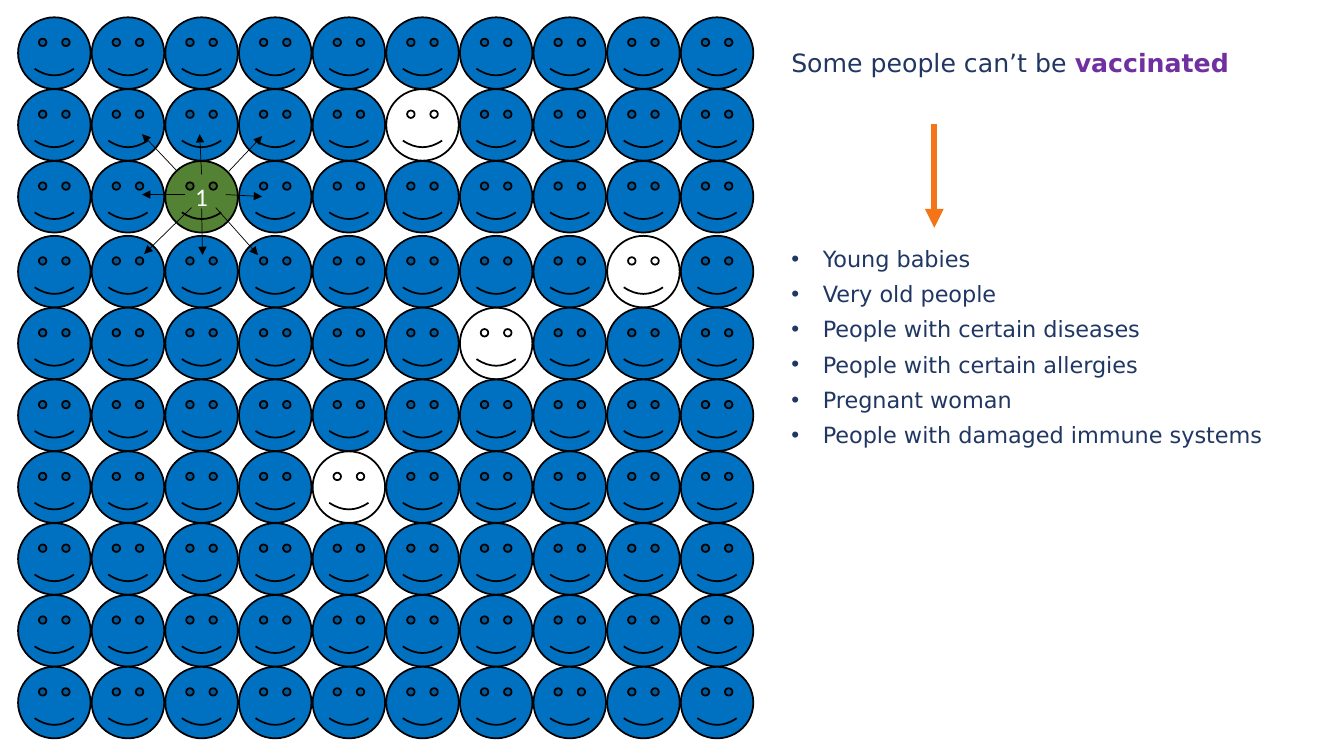
from dataclasses import dataclass

from lxml.etree import SubElement
from pptx import Presentation
from pptx.dml.color import RGBColor
from pptx.enum.shapes import MSO_CONNECTOR as Connector, MSO_SHAPE as Shape
from pptx.enum.text import MSO_ANCHOR as Anchor, MSO_AUTO_SIZE as AutoSize, PP_ALIGN as Align
from pptx.oxml.ns import qn
from pptx.util import Pt


@dataclass(frozen=True)
class Theme:
    protected: RGBColor = RGBColor(0x00, 0x70, 0xC0)
    infected: RGBColor = RGBColor(0x54, 0x82, 0x35)
    outline: RGBColor = RGBColor(0, 0, 0)
    paper: RGBColor = RGBColor(0xFF, 0xFF, 0xFF)
    text: RGBColor = RGBColor(0x21, 0x37, 0x63)
    keyword: RGBColor = RGBColor(0x70, 0x30, 0xA0)
    pointer: RGBColor = RGBColor(0xF3, 0x75, 0x18)
    text_font: str = "DejaVu Sans"
    label_font: str = "Calibri"
    heading_size: int = 18
    list_size: int = 16


THEME = Theme()

# Crowd grid, in points; rows from GAP_ROW on sit slightly lower
GRID_SIZE = 10
GRID_LEFT, GRID_TOP = 12.9, 12.4
COLUMN_STEP, ROW_STEP = 52.6, 51.3
FACE_WIDTH, FACE_HEIGHT = 51.8, 51.1
GAP_ROW, ROW_GAP = 3, 2.2

# Places in the grid as (row, column)
INFECTED = (2, 2)
UNVACCINATED = {(1, 5), (3, 8), (4, 6), (6, 4)}

# Spread of the infection: start x, y and end x, y in points
SPREAD = [
    (144, 124.6, 142.6, 95.8),
    (163.4, 122.4, 187.2, 97.2),
    (161.3, 139, 187.2, 140.4),
    (132.5, 139, 101.5, 139),
    (136.8, 148.3, 103, 181.4),
    (144, 149, 144.7, 182.2),
    (126.7, 122.4, 101.5, 95.8),
    (154.1, 148.3, 184.3, 182.2),
]

REASONS = [
    "Young babies",
    "Very old people",
    "People with certain diseases",
    "People with certain allergies",
    "Pregnant woman",
    "People with damaged immune systems",
]


def style_font(font, name, size, color):
    font.name = name
    font.size = Pt(size)
    font.color.rgb = color


def add_face(crowd, row, column):
    top = GRID_TOP + row * ROW_STEP + (ROW_GAP if row >= GAP_ROW else 0)
    face = crowd.shapes.add_shape(
        Shape.SMILEY_FACE, Pt(GRID_LEFT + column * COLUMN_STEP), Pt(top),
        Pt(FACE_WIDTH), Pt(FACE_HEIGHT))
    face.shadow.inherit = False
    face.line.color.rgb = THEME.outline
    face.line.width = Pt(1.25)
    if (row, column) in UNVACCINATED:
        face.fill.background()
    else:
        face.fill.solid()
        face.fill.fore_color.rgb = THEME.protected
    return face


def mark_infected(face, label):
    face.fill.fore_color.rgb = THEME.infected
    face.text_frame.vertical_anchor = Anchor.MIDDLE
    para = face.text_frame.paragraphs[0]
    para.text = label
    para.alignment = Align.CENTER
    style_font(para.font, THEME.label_font, THEME.heading_size, THEME.paper)


def add_crowd(page):
    crowd = page.shapes.add_group_shape()
    for row in range(GRID_SIZE):
        for column in range(GRID_SIZE):
            face = add_face(crowd, row, column)
            if (row, column) == INFECTED:
                mark_infected(face, "1")


def add_arrow(page, ends, color, width):
    arrow = page.shapes.add_connector(Connector.STRAIGHT, *map(Pt, ends))
    arrow.line.color.rgb = color
    arrow.line.width = Pt(width)
    properties = arrow.element.spPr
    SubElement(properties.find(qn("a:ln")), qn("a:tailEnd"), type="triangle")
    SubElement(properties, qn("a:effectLst"))


def place_text(box, left, top, width, height):
    box.left, box.top, box.width, box.height = map(Pt, (left, top, width, height))
    box.fill.solid()
    box.fill.fore_color.rgb = THEME.paper
    frame = box.text_frame
    frame.word_wrap = True
    frame.auto_size = AutoSize.NONE
    frame.vertical_anchor = Anchor.TOP
    return frame


def fill_heading(box, opening, keyword):
    para = place_text(box, 558, 30.2, 389.5, 28.8).paragraphs[0]
    para.alignment = Align.LEFT
    style_font(para.font, THEME.text_font, THEME.heading_size, THEME.text)
    para.add_run().text = opening
    span = para.add_run()
    span.text = keyword
    span.font.bold = True
    span.font.color.rgb = THEME.keyword


def fill_list(box, items):
    frame = place_text(box, 558, 171.4, 389.5, 175.7)
    frame.text = "\n".join(items)
    for para in frame.paragraphs:
        para.space_before = Pt(6)
        style_font(para.font, THEME.text_font, THEME.list_size, THEME.text)
        # Hanging indent for the template's bullet
        indents = para._p.get_or_add_pPr()
        indents.set("marL", str(Pt(22.5)))
        indents.set("indent", str(Pt(-22.5)))


def main():
    deck = Presentation()
    deck.slide_width, deck.slide_height = Pt(960), Pt(540)
    page = deck.slides.add_slide(deck.slide_layouts[1])

    # Left: the crowd and the spreading infection
    add_crowd(page)
    for ends in SPREAD:
        add_arrow(page, ends, THEME.outline, 0.5)

    # Right: who can't be vaccinated
    heading, reasons = page.placeholders
    fill_heading(heading, "Some people can’t be ", "vaccinated")
    fill_list(reasons, REASONS)
    add_arrow(page, (667.4, 88.6, 667.4, 162.7), THEME.pointer, 4.5)

    deck.save("out.pptx")


if __name__ == "__main__":
    main()
